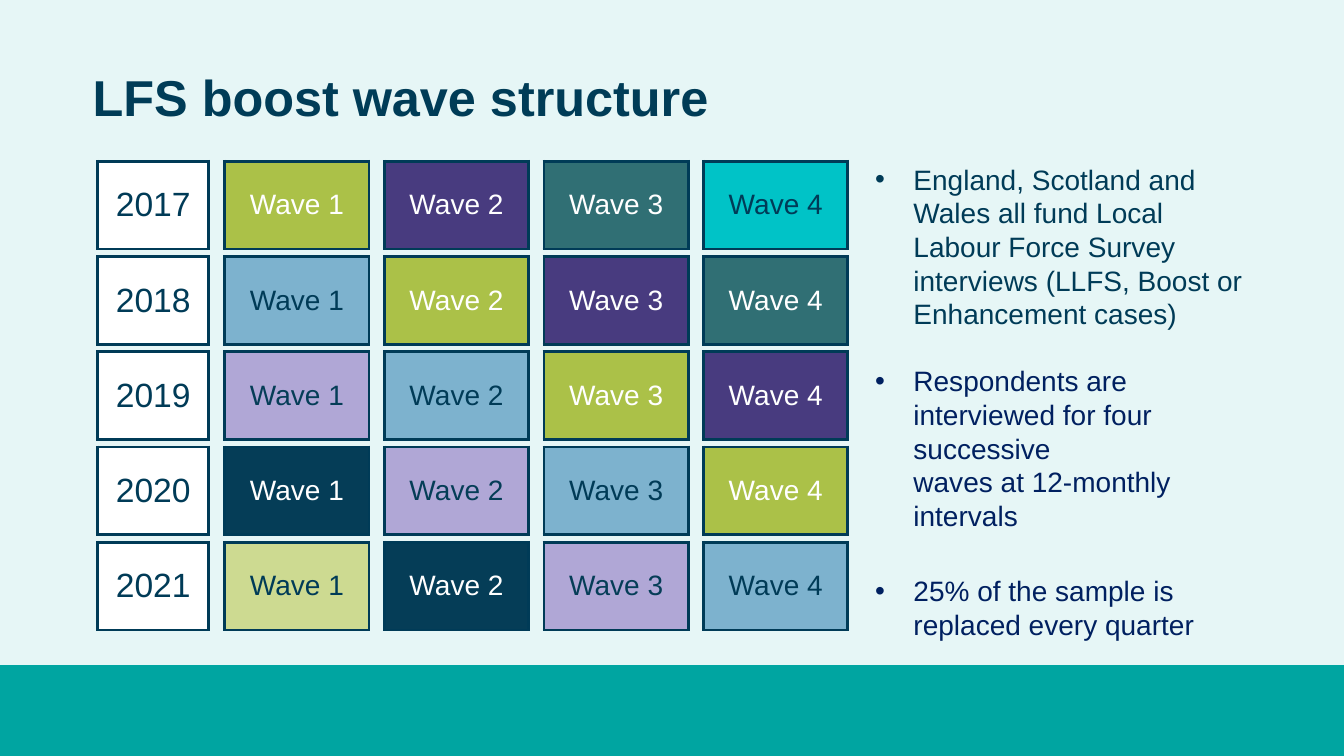
from dataclasses import dataclass

from lxml import etree
from pptx import Presentation
from pptx import util as u
from pptx.dml.color import RGBColor
from pptx.enum import shapes, text
from pptx.oxml import ns


@dataclass(frozen=True)
class Theme:
    font: str = "Arial"
    page: str = "E6F6F6"
    band: str = "00A5A1"
    title: str = "003C57"
    ink: str = "003B57"
    navy: str = "002060"
    white: str = "FFFFFF"
    title_size: int = 36
    year_size: int = 24
    body_size: int = 20
    border: float = 2.25


THEME = Theme()
WIDTH, HEIGHT = 13.33, 7.5

# Grid of years (rows) and waves (columns), in inches
YEARS = range(2017, 2022)
WAVES = range(1, 5)
YEAR_LEFT, YEAR_WIDTH = 0.97, 1.1
WAVE_LEFT, WAVE_WIDTH, WAVE_STEP = 2.23, 1.43, 1.583
ROW_TOP, ROW_HEIGHT, ROW_STEP = 1.6, 0.87, 0.945

# Fill and text colour of each cohort, oldest first
COHORTS = [
    ("00C3C7", THEME.ink),
    ("306F74", THEME.white),
    ("483B7F", THEME.white),
    ("ABC148", THEME.white),
    ("7DB2CE", THEME.ink),
    ("B0A7D6", "053D57"),
    ("053D57", THEME.white),
    ("CDDA91", THEME.ink),
]

# Lines of each bullet, its colour and the space after it in points
BULLETS = [
    (["England, Scotland and Wales all fund Local Labour Force Survey "
      "interviews (LLFS, Boost or Enhancement cases)"], THEME.ink, 24),
    (["Respondents are interviewed for four successive",
      "waves at 12-monthly intervals"], THEME.navy, 30),
    (["25% of the sample is replaced every quarter"], THEME.navy, 6),
]


def rgb(value):
    return RGBColor.from_string(value)


def inches(*lengths):
    return [u.Inches(length) for length in lengths]


def add_span(para, words, size, color, bold=False):
    span = para.add_run()
    span.text = words
    span.font.name = THEME.font
    span.font.size = u.Pt(size)
    span.font.bold = bold
    span.font.color.rgb = rgb(color)


def add_box(page, area, margins, anchor):
    frame = page.shapes.add_textbox(*inches(*area)).text_frame
    frame.word_wrap = True
    frame.vertical_anchor = anchor
    (frame.margin_left, frame.margin_top,
     frame.margin_right, frame.margin_bottom) = inches(*margins)
    return frame


def add_band(page):
    band = page.shapes.add_shape(
        shapes.MSO_SHAPE.RECTANGLE,
        *inches(0, HEIGHT * 0.88, WIDTH, HEIGHT * 0.12))
    band.shadow.inherit = False
    band.fill.solid()
    band.fill.fore_color.rgb = rgb(THEME.band)
    band.line.fill.background()


def add_title(page, words):
    frame = add_box(page, (0.92, 0.7, 11.5, 0.58), (0, 0, 0, 0),
                    text.MSO_ANCHOR.TOP)
    para = frame.paragraphs[0]
    para.line_spacing = 0.95
    add_span(para, words, THEME.title_size, THEME.title, bold=True)


def set_borders(cell):
    props = cell._tc.get_or_add_tcPr()
    for side in ("lnL", "lnR", "lnT", "lnB"):
        line = etree.SubElement(props, ns.qn(f"a:{side}"),
                                w=str(u.Pt(THEME.border)))
        fill = etree.SubElement(line, ns.qn("a:solidFill"))
        etree.SubElement(fill, ns.qn("a:srgbClr"), val=THEME.ink)


def add_tile(page, left, row, width, words, size, fill, color):
    """Add a one-cell table on the given grid row."""
    area = inches(left, ROW_TOP + row * ROW_STEP, width, ROW_HEIGHT)
    table = page.shapes.add_table(1, 1, *area).table
    table.first_row = table.horz_banding = False
    cell = table.cell(0, 0)
    set_borders(cell)
    cell.fill.solid()
    cell.fill.fore_color.rgb = rgb(fill)
    cell.vertical_anchor = text.MSO_ANCHOR.MIDDLE
    para = cell.text_frame.paragraphs[0]
    para.alignment = text.PP_ALIGN.CENTER
    add_span(para, words, size, color)


def add_wave_grid(page):
    for row, year in enumerate(YEARS):
        add_tile(page, YEAR_LEFT, row, YEAR_WIDTH, str(year),
                 THEME.year_size, THEME.white, THEME.ink)
        for column, wave in enumerate(WAVES):
            # A cohort moves one wave to the right each year
            fill, color = COHORTS[len(WAVES) - 1 + row - column]
            add_tile(page, WAVE_LEFT + column * WAVE_STEP, row, WAVE_WIDTH,
                     f"Wave {wave}", THEME.body_size, fill, color)


def set_bullet(para, indent):
    props = para._p.get_or_add_pPr()
    props.set("marL", str(u.Inches(indent)))
    props.set("indent", str(-u.Inches(indent)))
    etree.SubElement(props, ns.qn("a:buFont"), typeface=THEME.font)
    etree.SubElement(props, ns.qn("a:buChar"), char="•")


def add_bullets(page):
    frame = add_box(page, (8.68, 1.51, 3.77, 4.9), (0, 0.05, 0.1, 0.05),
                    text.MSO_ANCHOR.BOTTOM)
    for index, (lines, color, gap) in enumerate(BULLETS):
        para = frame.add_paragraph() if index else frame.paragraphs[0]
        set_bullet(para, 0.38)
        para.line_spacing = u.Pt(24)
        para.space_after = u.Pt(gap)
        for number, line in enumerate(lines):
            if number:
                para.add_line_break()
            add_span(para, line, THEME.body_size, color)


def main():
    deck = Presentation()
    deck.slide_width, deck.slide_height = inches(WIDTH, HEIGHT)
    page = deck.slides.add_slide(deck.slide_layouts[6])
    page.background.fill.solid()
    page.background.fill.fore_color.rgb = rgb(THEME.page)

    add_band(page)
    add_title(page, "LFS boost wave structure")
    add_wave_grid(page)
    add_bullets(page)
    deck.save("out.pptx")


if __name__ == "__main__":
    main()
